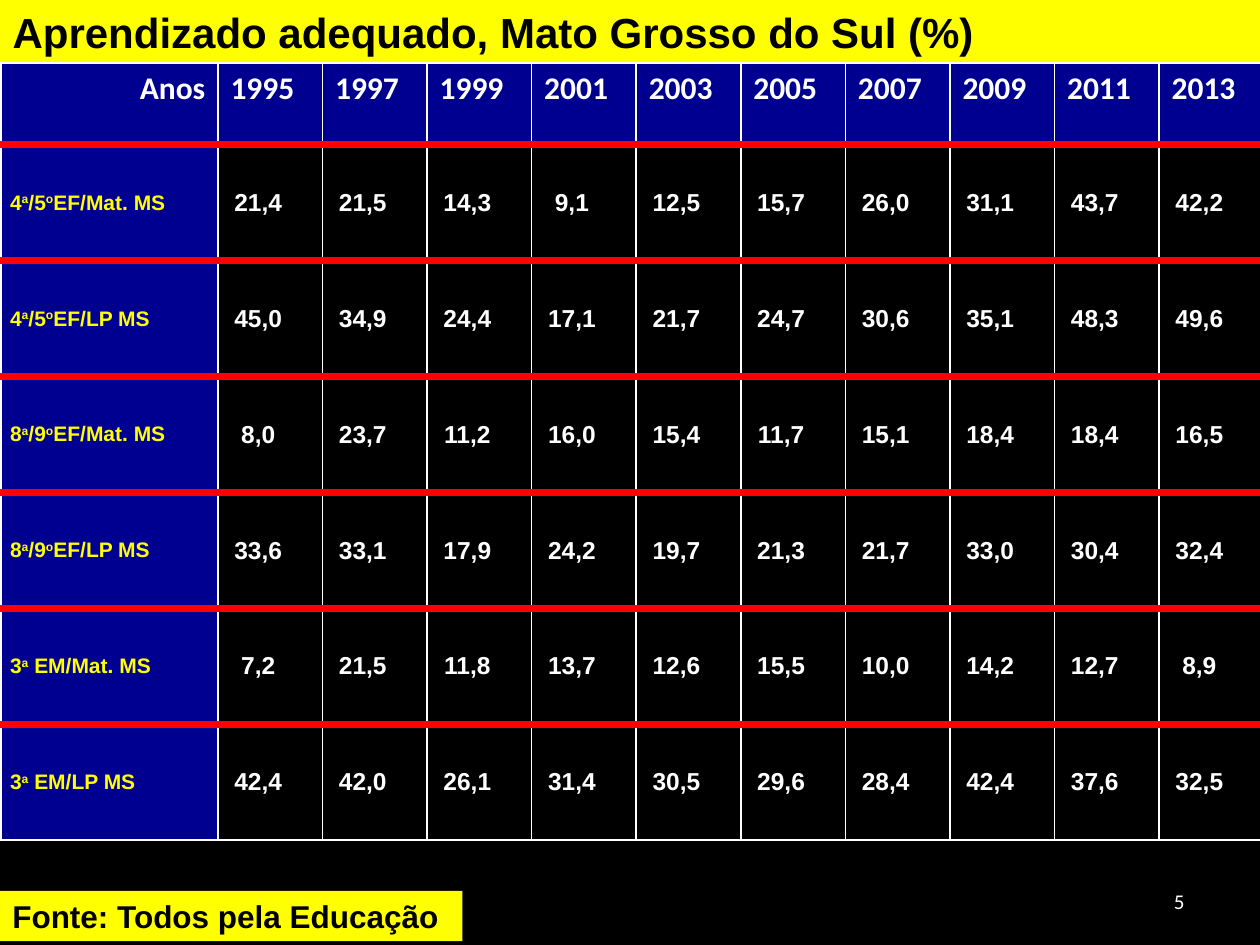
from dataclasses import dataclass

from lxml import etree
from pptx import Presentation
from pptx import util as u
from pptx.dml.color import RGBColor
from pptx.enum import text
from pptx.oxml import ns


@dataclass(frozen=True)
class Theme:
    black: str = "000000"
    white: str = "FFFFFF"
    yellow: str = "FFFF00"
    navy: str = "000090"
    red: str = "FF0000"
    sans: str = "Arial"
    heading: str = "Calibri"
    title: int = 24
    large: int = 18
    value: int = 14
    small: int = 12
    thin: float = 1
    thick: float = 4.5


@dataclass(frozen=True)
class Style:
    font: str
    size: int
    color: str
    bold: bool = True
    align: text.PP_ALIGN = text.PP_ALIGN.LEFT


@dataclass(frozen=True)
class Series:
    label: str  # "^" raises the letter that follows it
    values: str


THEME = Theme()
YEARS = range(1995, 2014, 2)
SERIES = [
    Series("4^a/5^oEF/Mat. MS", "21,4 21,5 14,3 9,1 12,5 15,7 26,0 31,1 43,7 42,2"),
    Series("4^a/5^oEF/LP MS", "45,0 34,9 24,4 17,1 21,7 24,7 30,6 35,1 48,3 49,6"),
    Series("8^a/9^oEF/Mat. MS", "8,0 23,7 11,2 16,0 15,4 11,7 15,1 18,4 18,4 16,5"),
    Series("8^a/9^oEF/LP MS", "33,6 33,1 17,9 24,2 19,7 21,3 21,7 33,0 30,4 32,4"),
    Series("3^a EM/Mat. MS", "7,2 21,5 11,8 13,7 12,6 15,5 10,0 14,2 12,7 8,9"),
    Series("3^a EM/LP MS", "42,4 42,0 26,1 31,4 30,5 29,6 28,4 42,4 37,6 32,5"),
]

CORNER = Style(THEME.heading, THEME.large, THEME.white, align=text.PP_ALIGN.RIGHT)
YEAR = Style(THEME.heading, THEME.large, THEME.white)
LABEL = Style(THEME.sans, THEME.small, THEME.yellow, align=text.PP_ALIGN.JUSTIFY)
VALUE = Style(THEME.sans, THEME.value, THEME.white, align=text.PP_ALIGN.CENTER)
TITLE = Style(THEME.sans, THEME.title, THEME.black)
SOURCE = Style(THEME.sans, THEME.large, THEME.black)
NUMBER = Style(THEME.heading, THEME.small, THEME.white, False, text.PP_ALIGN.RIGHT)


def write(frame, content: str, style: Style) -> None:
    """Fill a text frame, raising each letter marked with "^"."""
    para = frame.paragraphs[0]
    para.alignment = style.align
    first, *marked = content.split("^")
    pieces = [(first, False)]
    for part in marked:
        pieces += [(part[0], True), (part[1:], False)]
    for piece, raised in pieces:
        span = para.add_run()
        span.text = piece
        span.font.name = style.font
        span.font.size = u.Pt(style.size)
        span.font.bold = style.bold
        span.font.color.rgb = RGBColor.from_string(style.color)
        if raised:
            span._r.get_or_add_rPr().set("baseline", "30000")


def paint(thing, color: str) -> None:
    thing.fill.solid()
    thing.fill.fore_color.rgb = RGBColor.from_string(color)


def add_border(cell, side: str, color: str, width: float) -> None:
    line = etree.SubElement(cell._tc.get_or_add_tcPr(), ns.qn(f"a:ln{side}"), w=str(u.Pt(width)))
    fill = etree.SubElement(line, ns.qn("a:solidFill"))
    etree.SubElement(fill, ns.qn("a:srgbClr"), val=color)


def format_cell(cell, content: str, style: Style, row: int, color: str) -> None:
    """Write a cell; inner row edges are thick red, all others thin white."""
    thin, thick = (THEME.white, THEME.thin), (THEME.red, THEME.thick)
    add_border(cell, "L", *thin)
    add_border(cell, "R", *thin)
    add_border(cell, "T", *(thick if row > 0 else thin))
    add_border(cell, "B", *(thick if row < len(SERIES) else thin))
    paint(cell, color)
    if row:
        cell.vertical_anchor = text.MSO_ANCHOR.MIDDLE
        cell.margin_left = cell.margin_right = u.Inches(0.07)
        cell.margin_top = cell.margin_bottom = 0
        if style is VALUE:
            cell.margin_right = u.Inches(0.26)
    write(cell.text_frame, content, style)


def add_results(page) -> None:
    table = page.shapes.add_table(
        len(SERIES) + 1, len(YEARS) + 1,
        u.Inches(0.01), u.Inches(0.5), u.Inches(10), u.Inches(6.17),
    ).table
    table.horz_banding = False
    for index, column in enumerate(table.columns):
        column.width = u.Inches(0.83 if index else 1.72)
    for index, row in enumerate(table.rows):
        row.height = u.Inches(0.92 if index else 0.65)

    format_cell(table.cell(0, 0), "Anos", CORNER, 0, THEME.navy)
    for column, year in enumerate(YEARS, 1):
        format_cell(table.cell(0, column), str(year), YEAR, 0, THEME.navy)
    for row, series in enumerate(SERIES, 1):
        format_cell(table.cell(row, 0), series.label, LABEL, row, THEME.navy)
        for column, value in enumerate(series.values.split(), 1):
            format_cell(table.cell(row, column), value, VALUE, row, THEME.black)


def place_text(box, left: float, top: float, width: float, height: float,
               content: str, style: Style, anchor=text.MSO_ANCHOR.TOP) -> None:
    box.left, box.top = u.Inches(left), u.Inches(top)
    box.width, box.height = u.Inches(width), u.Inches(height)
    frame = box.text_frame
    frame.word_wrap = True
    frame.auto_size = text.MSO_AUTO_SIZE.NONE
    frame.vertical_anchor = anchor
    write(frame, content, style)


def main() -> None:
    deck = Presentation()
    deck.slide_width, deck.slide_height = u.Inches(10), u.Inches(7.5)
    page = deck.slides.add_slide(deck.slide_layouts.get_by_name("Title Only"))
    paint(page.background, THEME.black)

    add_results(page)
    title = page.shapes.title
    place_text(title, 0, 0, 10, 0.5, "Aprendizado adequado, Mato Grosso do Sul (%)", TITLE)
    paint(title, THEME.yellow)

    source = page.shapes.add_textbox(0, 0, 0, 0)
    place_text(source, 0, 7.07, 3.67, 0.4, "Fonte: Todos pela Educação", SOURCE)
    paint(source, THEME.yellow)

    number = page.shapes.add_textbox(0, 0, 0, 0)
    place_text(number, 7.17, 6.95, 2.33, 0.4, "5", NUMBER, text.MSO_ANCHOR.MIDDLE)

    deck.save("out.pptx")


if __name__ == "__main__":
    main()
